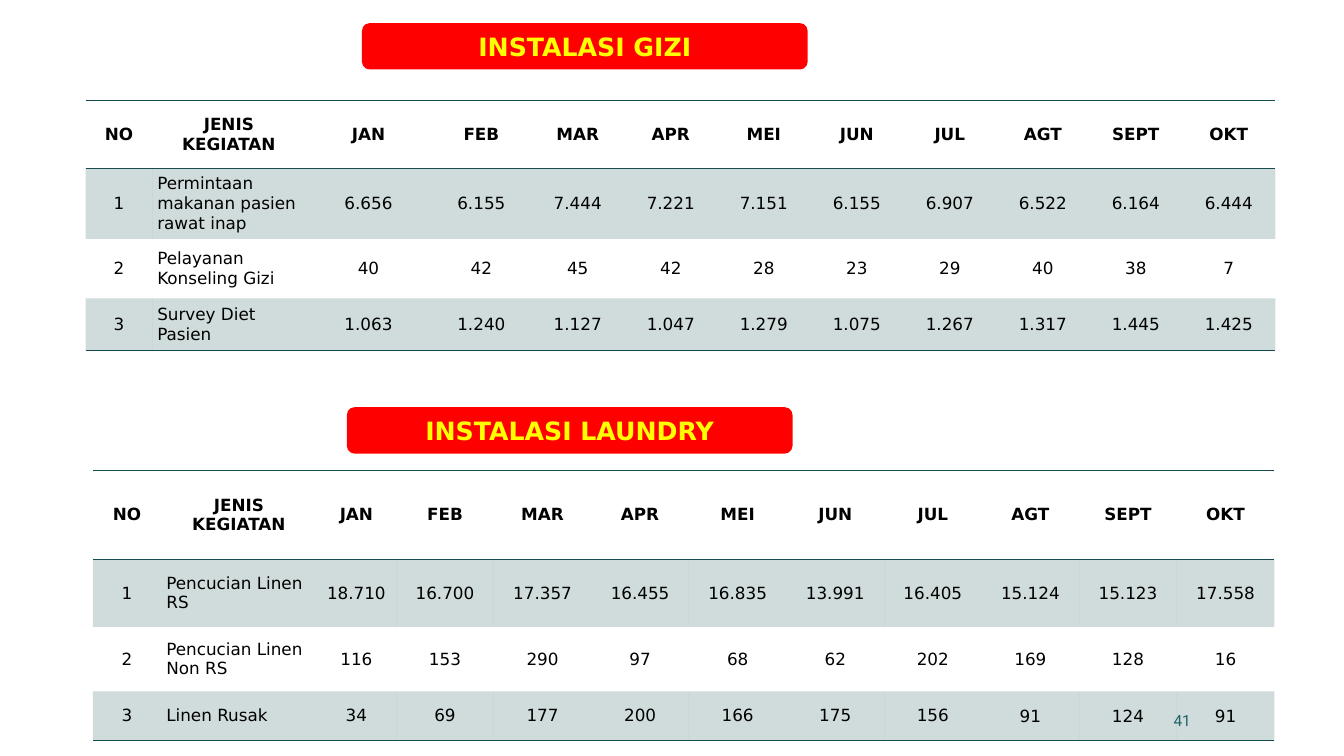
from lxml import etree
from pptx import Presentation, util as u
from pptx.dml.color import RGBColor
from pptx.enum import shapes, text
from pptx.oxml.ns import qn

HEAD = ["NO", "JENIS KEGIATAN", "JAN", "FEB", "MAR", "APR", "MEI", "JUN",
        "JUL", "AGT", "SEPT", "OKT"]
UNITS = [
    {"title": "INSTALASI GIZI", "badge": (3.59, 0.23), "table": (0.85, 1, 11.8),
     "cols": [0.66, 1.52, 1.25, 0.99], "rows": [0.67, 0.69, 0.59, 0.52],
     "data": [
         ("Permintaan makanan pasien rawat inap",
          "6.656 6.155 7.444 7.221 7.151 6.155 6.907 6.522 6.164 6.444"),
         ("Pelayanan Konseling Gizi", "40 42 45 42 28 23 29 40 38 7"),
         ("Survey Diet Pasien",
          "1.063 1.240 1.127 1.047 1.279 1.075 1.267 1.317 1.445 1.425")]},
    {"title": "INSTALASI LAUNDRY", "badge": (3.44, 4.04), "table": (0.92, 4.67, 11.72),
     "cols": [0.68, 1.54, 0.79], "rows": [0.88, 0.67, 0.64, 0.49],
     "data": [
         ("Pencucian Linen RS",
          "18.710 16.700 17.357 16.455 16.835 13.991 16.405 15.124 15.123 17.558"),
         ("Pencucian Linen Non RS", "116 153 290 97 68 62 202 169 128 16"),
         ("Linen Rusak", "34 69 177 200 166 175 156 91 124 91")]},
]
PAGE = ("41", (8.8, 6.95, 3.11, 0.4))
COLOR = {"teal": "164B4F", "page": "1F696F", "red": "FF0000",
         "yellow": "FFFF00", "black": "000000"}
FONT = "DejaVu Sans"
PLAIN = "{2D5ABB26-0587-4C30-8999-92F81FD0307C}"
MID = text.MSO_ANCHOR.MIDDLE
ALIGN = text.PP_ALIGN


def rgb(name):
    return RGBColor.from_string(COLOR[name])


def write(frame, words, size, color, bold=False, align=ALIGN.CENTER, font=FONT):
    para = frame.paragraphs[0]
    para.text, para.alignment = words, align
    para.font.name, para.font.size = font, u.Pt(size)
    para.font.bold, para.font.color.rgb = bold, rgb(color)


def shade(cell):
    cell.fill.solid()
    cell.fill.fore_color.rgb = rgb("teal")
    tint = next(cell._tc.tcPr.iter(qn("a:srgbClr")))
    etree.SubElement(tint, qn("a:alpha"), val="20000")


def rule(cell, side):
    line = etree.Element(qn("a:ln" + side), w="12700")
    fill = etree.SubElement(line, qn("a:solidFill"))
    etree.SubElement(fill, qn("a:srgbClr"), val=COLOR["teal"])
    cell._tc.get_or_add_tcPr().insert(0, line)


def grid(slide, unit):
    left, top, width = unit["table"]
    cols, rows = unit["cols"], unit["rows"]
    rest = len(HEAD) - len(cols)
    cols = cols + [(width - sum(cols)) / rest] * rest
    body = [[str(n), job] + vals.split() for n, (job, vals) in enumerate(unit["data"], 1)]
    frame = slide.shapes.add_table(len(rows), len(cols), *map(
        u.Inches, (left, top, width, sum(rows))))
    table = frame.table
    table.first_row = table.horz_banding = False
    table._tbl.tblPr.find(qn("a:tableStyleId")).text = PLAIN
    for col, wide in zip(table.columns, cols):
        col.width = u.Inches(wide)
    for row, high in zip(table.rows, rows):
        row.height = u.Inches(high)
    for r, line in enumerate([HEAD] + body):
        for c, words in enumerate(line):
            cell = table.cell(r, c)
            late = c >= len(HEAD) - 3 and r > 0
            pad = u.Inches(0.01 if late else 0.05)
            cell.margin_left = cell.margin_right = cell.margin_top = pad
            cell.margin_bottom = 0 if late else pad
            cell.vertical_anchor = MID
            job = c == 1 and r > 0
            write(cell.text_frame, words, 12, "black", r == 0,
                  ALIGN.LEFT if job else ALIGN.CENTER)
            if r % 2:
                shade(cell)
            else:
                cell.fill.background()
            if r in (0, len(rows) - 1):
                rule(cell, "B")
            if r == 0:
                rule(cell, "T")


def badge(slide, unit):
    box = slide.shapes.add_shape(shapes.MSO_SHAPE.ROUNDED_RECTANGLE, *map(
        u.Inches, unit["badge"] + (4.42, 0.46)))
    box.shadow.inherit = False
    box.fill.solid()
    box.fill.fore_color.rgb = rgb("red")
    box.line.fill.background()
    box.text_frame.vertical_anchor = MID
    write(box.text_frame, unit["title"], 18, "yellow", True)


def number(slide):
    words, place = PAGE
    frame = slide.shapes.add_textbox(*map(u.Inches, place)).text_frame
    frame.word_wrap, frame.vertical_anchor = True, MID
    write(frame, words, 11, "page", align=ALIGN.RIGHT, font="Roboto")


def main():
    """Build the slide of monthly nutrition and laundry activity."""
    deck = Presentation()
    deck.slide_width, deck.slide_height = u.Inches(13.33), u.Inches(7.5)
    slide = deck.slides.add_slide(deck.slide_layouts[6])
    number(slide)
    for unit in UNITS:
        grid(slide, unit)
        badge(slide, unit)
    deck.save("out.pptx")


if __name__ == "__main__":
    main()
